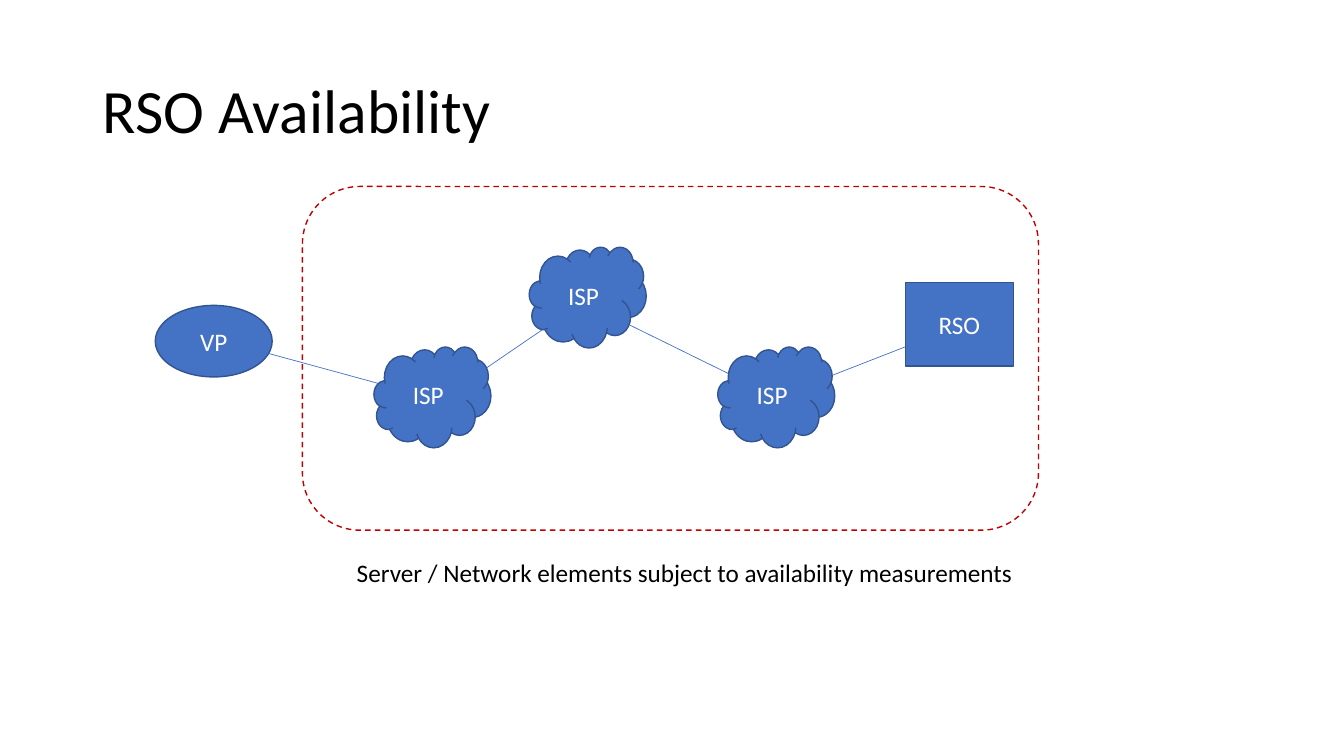
from pptx import Presentation
from pptx.dml.color import RGBColor
from pptx.enum.dml import MSO_LINE as Dash
from pptx.enum.shapes import MSO_CONNECTOR as Conn, MSO_SHAPE as Shape
from pptx.enum.text import MSO_ANCHOR as Anchor, MSO_AUTO_SIZE as Fit, PP_ALIGN as Align
from pptx.oxml.ns import qn
from pptx.util import Inches, Pt
from lxml.etree import SubElement as sub


def color(code):
    return RGBColor.from_string(code)


def apply(target, style):
    for name, value in style.items():
        setattr(target, name, value)


class Board:
    font = "Calibri"
    blue, edge, red = "4472C4", "325491", "C00000"
    black, white = "000000", "FFFFFF"

    def __init__(self, deck):
        self.slide = deck.slides.add_slide(deck.slide_layouts[5])
        self.shapes = self.slide.shapes

    def letter(self, shape, text, size, ink, align, anchor, fit=Fit.NONE, space=1.0):
        frame = shape.text_frame
        apply(frame, {"text": text, "word_wrap": True,
                      "auto_size": fit, "vertical_anchor": anchor})
        para = frame.paragraphs[0]
        apply(para, {"alignment": align, "line_spacing": space})
        face = para.runs[0].font
        apply(face, {"name": self.font, "size": Pt(size)})
        face.color.rgb = color(ink)

    def title(self, text, *box):
        head = self.shapes.title
        names = ("left", "top", "width", "height")
        apply(head, dict(zip(names, map(Inches, box))))
        self.letter(head, text, 44, self.black, Align.LEFT, Anchor.MIDDLE, space=0.9)

    def link(self, start, end):
        line = self.shapes.add_connector(Conn.STRAIGHT, *map(Inches, start + end))
        line.line.width = Pt(0.5)
        line.line.color.rgb = color(self.blue)
        props = line.element.spPr
        sub(props.find(qn("a:ln")), qn("a:tailEnd"), type="triangle")
        sub(props, qn("a:effectLst"))

    def shape(self, kind, box, stroke):
        item = self.shapes.add_shape(kind, *map(Inches, box))
        item.shadow.inherit = False
        item.line.width = Pt(1)
        item.line.color.rgb = color(stroke)
        return item

    def node(self, kind, text, *box):
        item = self.shape(kind, box, self.edge)
        item.fill.solid()
        item.fill.fore_color.rgb = color(self.blue)
        self.letter(item, text, 18, self.white, Align.CENTER, Anchor.MIDDLE)

    def zone(self, *box):
        item = self.shape(Shape.ROUNDED_RECTANGLE, box, self.red)
        item.fill.background()
        item.line.dash_style = Dash.DASH

    def label(self, text, *box):
        item = self.shapes.add_textbox(*map(Inches, box))
        self.letter(item, text, 18, self.black, Align.LEFT, Anchor.TOP, Fit.SHAPE_TO_FIT_TEXT)


def main():
    deck = Presentation()
    apply(deck, {"slide_width": Inches(13.33), "slide_height": Inches(7.5)})
    board = Board(deck)
    board.title("RSO Availability", 0.92, 0.4, 11.5, 1.45)

    right = (7.7, 3.94)
    for start, end in [
        (right, (9.52, 3.23)),
        ((2.42, 3.44), (4.25, 3.94)),
        ((5.85, 3.03), right),
        ((4.4, 3.94), (5.85, 2.95)),
    ]:
        board.link(start, end)

    board.node(Shape.OVAL, "VP", 1.54, 3.03, 1.16, 0.71)
    for left, top in [(3.71, 3.44), (5.25, 2.45), (7.12, 3.44)]:
        board.node(Shape.CLOUD, "ISP", left, top, 1.16, 1)
    board.node(Shape.RECTANGLE, "RSO", 8.98, 2.8, 1.07, 0.83)

    board.zone(3, 1.85, 7.3, 3.41)
    board.label("Server / Network elements subject to availability measurements",
                3.44, 5.48, 6.76, 0.4)
    deck.save("out.pptx")


if __name__ == "__main__":
    main()
